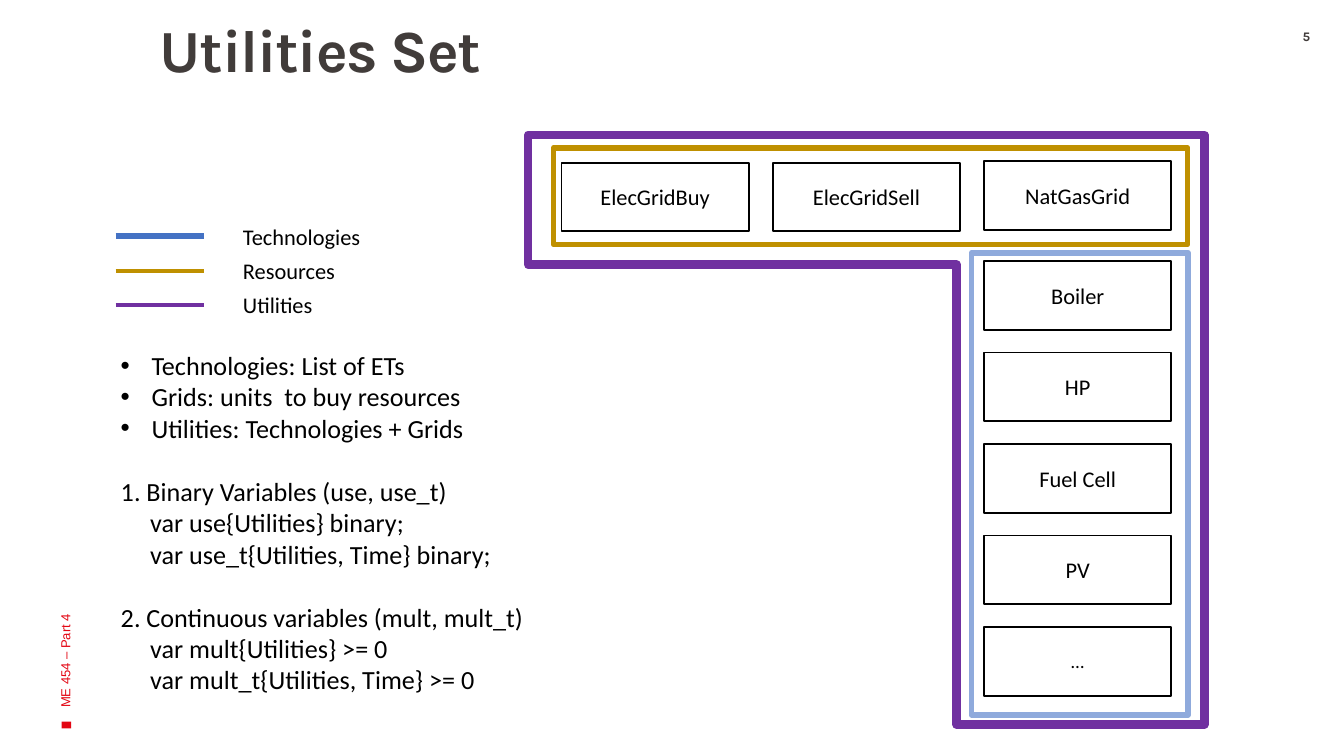
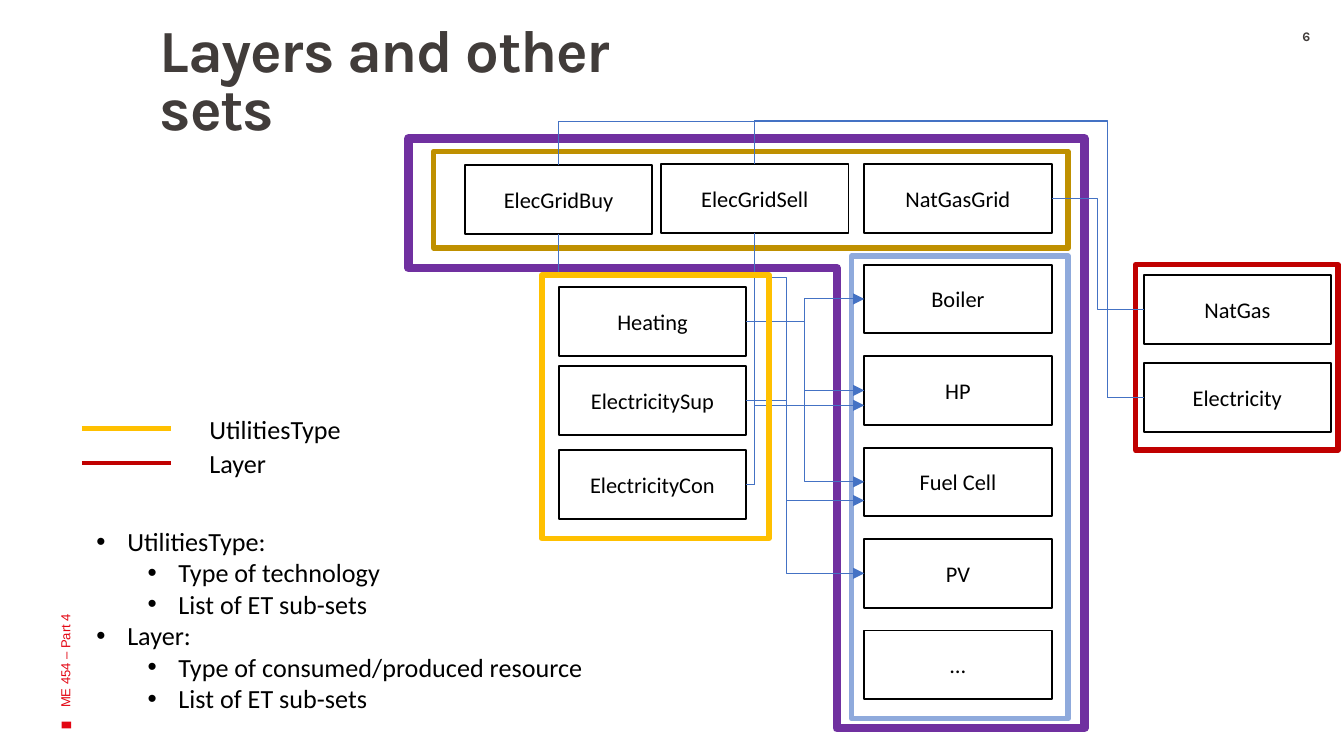
from lxml import etree
from pptx import Presentation
from pptx.dml.color import RGBColor
from pptx.enum.shapes import MSO_CONNECTOR, MSO_SHAPE
from pptx.enum.text import MSO_ANCHOR, MSO_AUTO_SIZE, PP_ALIGN
from pptx.oxml.ns import qn
from pptx.util import Pt

RECTANGLE = MSO_SHAPE.RECTANGLE
CORNER = MSO_SHAPE.CORNER
STRAIGHT = MSO_CONNECTOR.STRAIGHT
ELBOW = MSO_CONNECTOR.ELBOW
LEFT_ALIGN = PP_ALIGN.LEFT
CENTER = PP_ALIGN.CENTER
TOP_ANCHOR = MSO_ANCHOR.TOP
MIDDLE = MSO_ANCHOR.MIDDLE
NO_FIT = MSO_AUTO_SIZE.NONE
GROW = MSO_AUTO_SIZE.SHAPE_TO_FIT_TEXT

TOP, LEFT, BOTTOM, RIGHT = range(4)

BLACK = "000000"
WHITE = "FFFFFF"
RED = "E30613"
CHARCOAL = "413C3A"
BLUE = "4472C4"
LIGHT_BLUE = "8FAADC"
OCHRE = "BF9000"
PURPLE = "7030A0"
AMBER = "FFC000"
DARK_RED = "C00000"

HEADING_FONT = "Karla"
BODY_FONT = "Calibri"
FOOTER_FONT = "Arial"

UNIT_WIDTH, UNIT_HEIGHT = 100.4, 36.8
STACK_STEP = 49
HANG = 16.5
TECHNOLOGIES = ["Boiler", "HP", "Fuel Cell", "PV", "…"]


def rgb(value):
    return RGBColor.from_string(value)


def points(*lengths):
    return [Pt(length) for length in lengths]


def style_font(paragraph, size, color=BLACK, name=BODY_FONT, bold=False):
    for run in paragraph.runs:
        run.font.name = name
        run.font.size = Pt(size)
        run.font.bold = bold
        run.font.color.rgb = rgb(color)


def set_insets(frame, left, top, right, bottom):
    frame.margin_left, frame.margin_top = Pt(left), Pt(top)
    frame.margin_right, frame.margin_bottom = Pt(right), Pt(bottom)


def add_label(slide, text, area, size, anchor=MIDDLE, **font):
    label = slide.shapes.add_textbox(*points(*area))
    frame = label.text_frame
    frame.word_wrap = True
    frame.vertical_anchor = anchor
    frame.text = text
    style_font(frame.paragraphs[0], size, **font)
    return label


def add_block(slide, area, fill=None, outline=None, weight=1, kind=RECTANGLE):
    block = slide.shapes.add_shape(kind, *points(*area))
    block.shadow.inherit = False
    if fill:
        block.fill.solid()
        block.fill.fore_color.rgb = rgb(fill)
    else:
        block.fill.background()
    if outline:
        block.line.color.rgb = rgb(outline)
        block.line.width = Pt(weight)
    else:
        block.line.fill.background()
    return block


def add_unit(slide, text, left, top, size=12):
    unit = add_block(slide, (left, top, UNIT_WIDTH, UNIT_HEIGHT), WHITE, BLACK)
    frame = unit.text_frame
    frame.word_wrap = True
    frame.vertical_anchor = MIDDLE
    frame.text = text
    frame.paragraphs[0].alignment = CENTER
    style_font(frame.paragraphs[0], size)
    return unit


def style_line(connector, color, weight, arrow=False):
    connector.line.color.rgb = rgb(color)
    connector.line.width = Pt(weight)
    properties = connector.element.spPr
    if arrow:
        etree.SubElement(properties.find(qn("a:ln")), qn("a:tailEnd"), type="triangle")
    etree.SubElement(properties, qn("a:effectLst"))


def shape_bends(connector, preset, bends):
    geometry = connector.element.spPr.find(qn("a:prstGeom"))
    geometry.set("prst", preset)
    guides = geometry.find(qn("a:avLst"))
    for number, bend in enumerate(bends, 1):
        etree.SubElement(guides, qn("a:gd"), name=f"adj{number}",
                         fmla=f"val {round(bend * 100000)}")


def stand_upright(connector, dx, dy):
    center_x = connector.begin_x + dx // 2
    center_y = connector.begin_y + dy // 2
    connector.width, connector.height = abs(dy), abs(dx)
    connector.left = center_x - abs(dy) // 2
    connector.top = center_y - abs(dx) // 2
    transform = connector.element.spPr.find(qn("a:xfrm"))
    transform.attrib.pop("flipH", None)
    transform.set("rot", str((270 if dx > 0 else 90) * 60000))
    if dx > 0:
        transform.set("flipH", "1")


def add_wire(slide, source, exit_site, target, entry_site,
             turn_x=None, turn_y=None, offset=0, arrow=False):
    wire = slide.shapes.add_connector(ELBOW, 0, 0, 0, 0)
    wire.begin_connect(source, exit_site)
    if offset:
        wire.end_x = target.left
        wire.end_y = target.top + target.height // 2 + Pt(offset)
    else:
        wire.end_connect(target, entry_site)
    dx, dy = wire.end_x - wire.begin_x, wire.end_y - wire.begin_y
    across = (Pt(turn_x) - wire.begin_x) / dx if turn_x else None
    down = (Pt(turn_y) - wire.begin_y) / dy if turn_y else None
    if exit_site in (TOP, BOTTOM):
        stand_upright(wire, dx, dy)
        if turn_y:
            shape_bends(wire, "bentConnector4", [down, across])
        else:
            shape_bends(wire, "bentConnector2", [])
    else:
        shape_bends(wire, "bentConnector3", [across])
    style_line(wire, BLUE, 0.5, arrow)


def add_legend(slide, left, top, entries, size):
    for row, (text, color, weight) in enumerate(entries):
        y = top + row * 18.4
        key = slide.shapes.add_connector(STRAIGHT, *points(left, y, left + 47.5, y))
        style_line(key, color, weight)
        add_label(slide, text, (left + 61.2, y - 9, 116, 18), size)


def add_notes_list(slide, area, lines):
    box = slide.shapes.add_textbox(*points(*area))
    frame = box.text_frame
    frame.word_wrap = True
    frame.auto_size = GROW
    for number, (text, indent, bulleted, gap) in enumerate(lines):
        paragraph = frame.add_paragraph() if number else frame.paragraphs[0]
        paragraph.text = text
        properties = paragraph._p.get_or_add_pPr()
        properties.set("marL", str(Pt(indent)))
        if gap:
            paragraph.space_before = Pt(gap)
        if bulleted:
            properties.set("indent", str(-Pt(HANG)))
            etree.SubElement(properties, qn("a:buFont"), typeface="Arial")
            etree.SubElement(properties, qn("a:buChar"), char="•")
        style_font(paragraph, 14)


def add_titled_slide(deck, title_text, number):
    slide = deck.slides.add_slide(deck.slide_layouts[5])
    add_block(slide, (33.8, 385.9, 3.6, 5), RED).rotation = 270
    title = slide.shapes.title
    title.left, title.top, title.width, title.height = points(71.3, 14.4, 288.7, 84.2)
    frame = title.text_frame
    frame.text = title_text
    frame.word_wrap = True
    frame.auto_size = NO_FIT
    frame.vertical_anchor = TOP_ANCHOR
    set_insets(frame, 14.4, 0, 5.8, 3.6)
    heading = frame.paragraphs[0]
    heading.alignment = LEFT_ALIGN
    heading.line_spacing = 0.8
    style_font(heading, 32, CHARCOAL, HEADING_FONT, True)
    heading.runs[0].font._element.set("spc", "-70")

    course = add_label(slide, "ME 454 – Part 4", (-96.5, 218.9, 262.8, 72), 7,
                       color=RED, name=FOOTER_FONT)
    course.rotation = 270
    page = add_label(slide, str(number), (679.7, 15.1, 40.3, 13), 7, TOP_ANCHOR,
                     color=CHARCOAL, name=HEADING_FONT, bold=True)
    set_insets(page.text_frame, 7.2, 0, 7.2, 0)
    page.text_frame.paragraphs[0].alignment = CENTER
    return slide


def add_utilities(slide, left, top, grid_places, ellipsis_size):
    units = {}
    for text, x, y in grid_places:
        units[text] = add_unit(slide, text, x, y)
    for row, text in enumerate(TECHNOLOGIES):
        size = ellipsis_size if text == "…" else 12
        units[text] = add_unit(slide, text, left + 244.2, top + 67.7 + row * STACK_STEP, size)
    add_block(slide, (left + 13.5, top + 7, 339.8, 51.8), outline=OCHRE, weight=3)
    add_block(slide, (left + 237.5, top + 63.2, 116, 247.7), outline=LIGHT_BLUE, weight=3)
    border = add_block(slide, (left, top, 362.2, 316), outline=PURPLE, weight=4.5, kind=CORNER)
    border.rotation = 180
    border.adjustments[0] = 0.22
    border.adjustments[1] = 0.42
    return units


def build_utilities_set(deck):
    slide = add_titled_slide(deck, "Utilities Set", 5)
    add_utilities(slide, 283, 72.2, [("ElecGridBuy", 300.8, 87.2),
                                     ("ElecGridSell", 414, 87.2),
                                     ("NatGasGrid", 527.2, 86.3)], 10.1)
    add_legend(slide, 61.9, 126.6, [("Technologies", BLUE, 3),
                                    ("Resources", OCHRE, 2.25),
                                    ("Utilities", PURPLE, 2.25)], 12)
    add_notes_list(slide, (57.6, 183.6, 409.7, 193.7), [
        ("Technologies: List of ETs", HANG, True, 0),
        ("Grids: units  to buy resources", HANG, True, 0),
        ("Utilities: Technologies + Grids", HANG, True, 0),
        ("1. Binary Variables (use, use_t)", 0, False, 17),
        ("var use{Utilities} binary;", 15.8, False, 0),
        ("var use_t{Utilities, Time} binary;", 15.8, False, 0),
        ("2. Continuous variables (mult, mult_t)", 0, False, 17),
        ("var mult{Utilities} >= 0", 15.8, False, 0),
        ("var mult_t{Utilities, Time} >= 0", 15.8, False, 0)])


def build_layers(deck):
    slide = add_titled_slide(deck, "Layers and other sets", 6)
    units = add_utilities(slide, 218.8, 74.1, [("ElecGridBuy", 249.1, 88.4),
                                               ("ElecGridSell", 354.2, 88),
                                               ("NatGasGrid", 463, 88)], 12)
    buy, sell, gas_grid = units["ElecGridBuy"], units["ElecGridSell"], units["NatGasGrid"]
    boiler, pump, cell, solar = [units[name] for name in TECHNOLOGIES[:4]]
    heating = add_unit(slide, "Heating", 299.4, 153.9)
    supply = add_unit(slide, "ElectricitySup", 299.4, 196.1)
    consumption = add_unit(slide, "ElectricityCon", 299.4, 241.1)

    for technology in (boiler, pump, cell):
        add_wire(slide, heating, RIGHT, technology, LEFT, 431.3, arrow=True)
    add_wire(slide, supply, RIGHT, solar, LEFT, 421.2, arrow=True)
    add_wire(slide, supply, RIGHT, cell, LEFT, 421.5, offset=10, arrow=True)
    add_wire(slide, buy, BOTTOM, supply, RIGHT, 421.5, 148.8)
    add_wire(slide, sell, BOTTOM, consumption, RIGHT)
    add_wire(slide, consumption, RIGHT, pump, LEFT, 404.4, offset=8, arrow=True)

    natural_gas = add_unit(slide, "NatGas", 612.7, 147.4)
    electricity = add_unit(slide, "Electricity", 612.7, 194.6)
    add_block(slide, (608.4, 141.8, 108.3, 99.4), outline=DARK_RED, weight=3)
    add_wire(slide, gas_grid, RIGHT, natural_gas, LEFT, 588)
    for grid in (sell, buy):
        add_wire(slide, grid, TOP, electricity, LEFT, 593.3, 64.8)

    add_legend(slide, 43.9, 229.6, [("UtilitiesType", AMBER, 2.25),
                                    ("Layer", DARK_RED, 2.25)], 14)
    add_block(slide, (290.3, 147.4, 121.7, 141.1), outline=AMBER, weight=3)
    add_notes_list(slide, (44.6, 277.9, 308.9, 108.7), [
        ("UtilitiesType:", HANG, True, 0),
        ("Type of technology", 43.9, True, 0),
        ("List of ET sub-sets", 43.9, True, 0),
        ("Layer:", HANG, True, 0),
        ("Type of consumed/produced resource", 43.9, True, 0),
        ("List of ET sub-sets", 43.9, True, 0)])


def main():
    deck = Presentation()
    deck.slide_width, deck.slide_height = points(720, 405)
    build_utilities_set(deck)
    build_layers(deck)
    deck.save("out.pptx")


if __name__ == "__main__":
    main()
